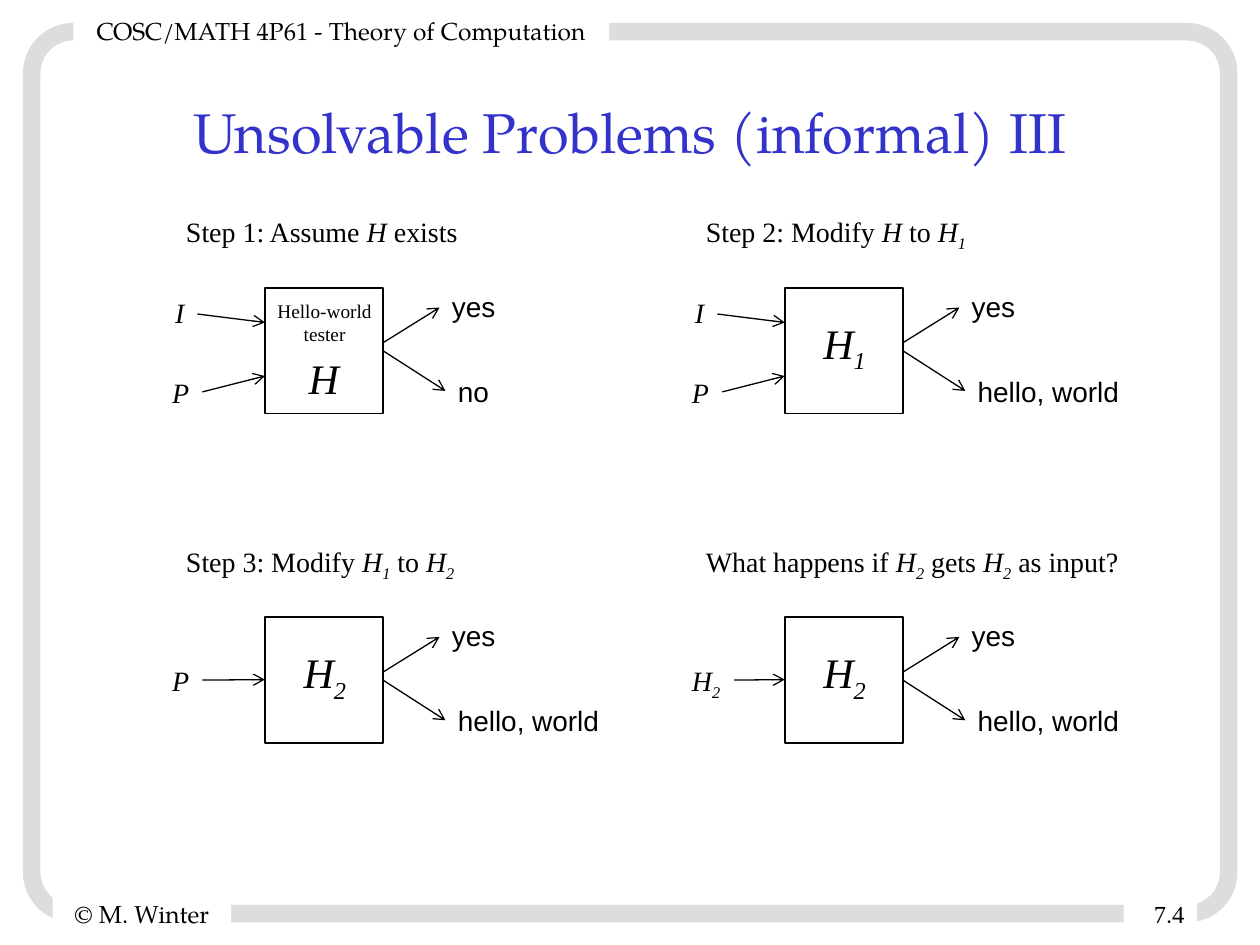
from pptx import Presentation
from pptx.dml.color import RGBColor
from pptx.enum.shapes import MSO_CONNECTOR, MSO_SHAPE
from pptx.enum.text import MSO_ANCHOR, MSO_AUTO_SIZE, PP_ALIGN
from pptx.oxml.ns import qn
from pptx.util import Cm, Pt
from lxml.etree import SubElement


class Theme:
    serif, display, sans = "Times New Roman", "TeX Gyre Pagella", "Arial"
    ink, title, frame, paper = (RGBColor.from_string(c) for c in
                                ("000000", "3333CC", "DDDDDD", "FFFFFF"))
    title_size, symbol_size, body_size, label_size, note_size = 32, 24, 16, 14, 11


# Content: |...| marks italics, _ a subscript; numbers after texts are widths in cm
TITLE = "Unsolvable Problems (informal) III"
LABELS = [  # left, top, width, height, alignment, (text, font) runs
    (1.06, 17.99, 3.6, 0.85, PP_ALIGN.CENTER, [("© M. Winter", Theme.display)]),
    (1.48, 0.2, 10.8, 0.85, PP_ALIGN.CENTER,
     [("COSC/MATH 4P61 - Theory of Computation", Theme.display)]),
    (22.65, 17.99, 1.48, 0.85, PP_ALIGN.RIGHT,
     [("7", Theme.serif), (".", Theme.display), ("4", Theme.serif)]),
]
YES, NO, HELLO = ("yes", 1.4), ("no", 1.14), ("hello, world", 3.38)
I, P, H2 = ("|I|", 0.7), ("|P|", 0.86), ("|H_2|", 1.1)
MACHINES = [  # heading, symbol, note, inputs, outputs
    (("Step 1: Assume |H| exists", 6.07), ("|H|", 1.14),
     ["Hello-world", "tester"], [I, P], [YES, NO]),
    (("Step 2: Modify |H| to |H_1|", 5.94), ("|H_1|", 1.42), [], [I, P], [YES, HELLO]),
    (("Step 3: Modify |H_1| to |H_2|", 6.05), ("|H_2|", 1.42), [], [P], [YES, HELLO]),
    (("What happens if |H_2| gets |H_2| as input?", 9.19), ("|H_2|", 1.42),
     [], [H2], [YES, HELLO]),
]

# Layout in cm; offsets count from the top left corner of a machine's box
ORIGIN, PITCH, BOX = (5.34, 5.8), (10.48, 6.64), (2.38, 2.54)
INPUTS = {  # by number of inputs: text offset, arrow start y, arrow end y
    1: [(-2.12, 0.82, 1.27, 1.26)],
    2: [(-2.06, 0.04, 0.53, 0.7), (-2.12, 1.64, 2.1, 1.78)],
}
OUTPUTS = [(3.52, -0.09, 1.11, 0.4), (3.64, 1.62, 1.27, 2.08)]


def add_runs(p, markup):
    for i, part in enumerate(markup.split("|")):
        for j, text in enumerate(part.split("_")):
            if text:
                r = p.add_run()
                r.text = text
                r.font.italic = i % 2 == 1
                if j:
                    r.font._element.set("baseline", "-25000")


def add_text(s, x, y, w, h, lines, size, font=Theme.serif, align=PP_ALIGN.LEFT):
    tf = s.shapes.add_textbox(Cm(x), Cm(y), Cm(w), Cm(h)).text_frame
    tf.word_wrap = False
    tf.auto_size = MSO_AUTO_SIZE.SHAPE_TO_FIT_TEXT
    for i, line in enumerate(lines):
        p = tf.add_paragraph() if i else tf.paragraphs[0]
        p.alignment = align
        p.font.name, p.font.size = font, Pt(size)
        p.font.color.rgb = Theme.ink
        add_runs(p, line)


def add_shape(s, kind, x, y, w, h, fill=None, line=None, width=1):
    sp = s.shapes.add_shape(kind, Cm(x), Cm(y), Cm(w), Cm(h))
    sp.shadow.inherit = False
    if fill is None:
        sp.fill.background()
    else:
        sp.fill.solid()
        sp.fill.fore_color.rgb = fill
    if line is None:
        sp.line.fill.background()
    else:
        sp.line.color.rgb, sp.line.width = line, Pt(width)
    return sp


def add_arrow(s, x1, y1, x2, y2):
    c = s.shapes.add_connector(MSO_CONNECTOR.STRAIGHT, Cm(x1), Cm(y1), Cm(x2), Cm(y2))
    c.line.color.rgb, c.line.width = Theme.ink, Pt(0.75)
    SubElement(c.line._get_or_add_ln(), qn("a:tailEnd"), type="arrow")
    SubElement(c._element.spPr, qn("a:effectLst"))


def add_machine(s, x, y, heading, symbol, note, inputs, outputs):
    box_w, box_h = BOX
    add_shape(s, MSO_SHAPE.RECTANGLE, x, y, box_w, box_h, line=Theme.ink)
    add_text(s, x - 1.84, y - 1.59, heading[1], 0.94, [heading[0]], Theme.body_size)
    if note:
        add_text(s, x, y + 0.1, 2.41, 1.19, note, Theme.note_size, align=PP_ALIGN.CENTER)
    dx, dy = (0.63, 1.18) if note else (0.53, 0.47)
    add_text(s, x + dx, y + dy, symbol[1], 1.27, [symbol[0]], Theme.symbol_size)

    # Inputs: each arrow leaves the right edge of its text
    for (text, w), (dx, dy, start, end) in zip(inputs, INPUTS[len(inputs)]):
        add_text(s, x + dx, y + dy, w, 0.94, [text], Theme.body_size)
        add_arrow(s, x + dx + w, y + start, x, y + end)

    # Outputs: each arrow ends at the left edge of its text
    for (text, w), (dx, dy, start, end) in zip(outputs, OUTPUTS):
        add_text(s, x + dx, y + dy, w, 0.94, [text], Theme.body_size, Theme.sans)
        add_arrow(s, x + box_w, y + start, x + dx, y + end)


def main():
    prs = Presentation()
    prs.slide_width, prs.slide_height = Cm(25.4), Cm(19.05)
    s = prs.slides.add_slide(prs.slide_layouts[5])

    # Frame and the labels that interrupt it
    frame = add_shape(s, MSO_SHAPE.ROUNDED_RECTANGLE, 0.64, 0.64, 24.13, 17.78,
                      line=Theme.frame, width=10)
    frame.adjustments[0] = 0.047
    for x, y, w, h, align, runs in LABELS:
        sp = add_shape(s, MSO_SHAPE.RECTANGLE, x, y, w, h, fill=Theme.paper)
        p = sp.text_frame.paragraphs[0]
        p.alignment = align
        p.font.size, p.font.color.rgb = Pt(Theme.label_size), Theme.ink
        for text, font in runs:
            r = p.add_run()
            r.text, r.font.name = text, font

    # Title
    title = s.shapes.title
    title.left, title.top, title.width, title.height = Cm(1.9), Cm(1.7), Cm(21.6), Cm(1.9)
    title.text_frame.text = TITLE
    title.text_frame.vertical_anchor = MSO_ANCHOR.MIDDLE
    p = title.text_frame.paragraphs[0]
    p.alignment = PP_ALIGN.CENTER
    p.font.name, p.font.size = Theme.display, Pt(Theme.title_size)
    p.font.color.rgb = Theme.title

    # Machines on a two by two grid
    for i, machine in enumerate(MACHINES):
        row, col = divmod(i, 2)
        add_machine(s, ORIGIN[0] + col * PITCH[0], ORIGIN[1] + row * PITCH[1], *machine)

    prs.save("out.pptx")


if __name__ == "__main__":
    main()
